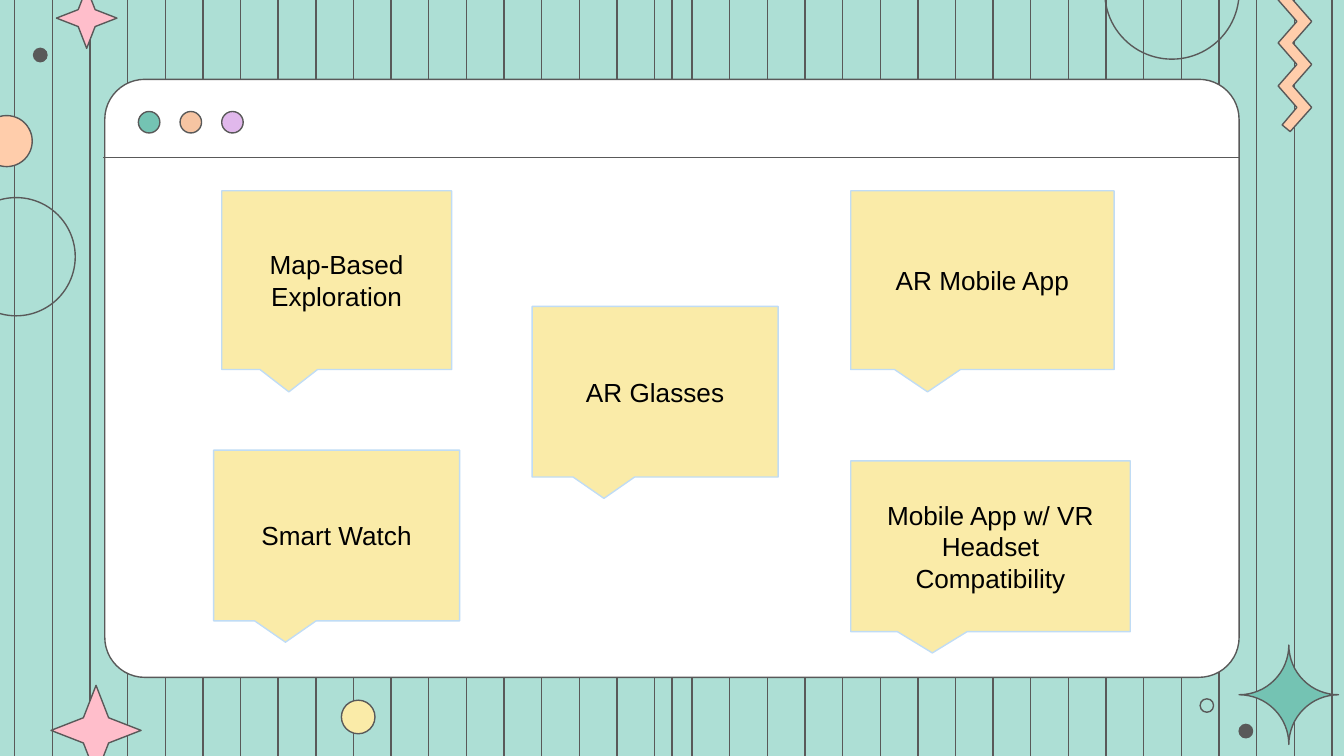
from math import cos, pi, sin

from pptx import Presentation
from pptx import util as u
from pptx.dml.color import RGBColor
from pptx.enum import shapes, text
from pptx.oxml import parse_xml
from pptx.oxml.ns import nsdecls

MINT = RGBColor(0xAD, 0xDF, 0xD5)
TEAL = RGBColor(0x74, 0xC3, 0xB3)
GREY = RGBColor(0x59, 0x59, 0x59)
WHITE = RGBColor(0xFF, 0xFF, 0xFF)
BLACK = RGBColor(0, 0, 0)
ORANGE = RGBColor(0xF6, 0xC4, 0xA2)
PEACH = RGBColor(0xFF, 0xCD, 0xAB)
LILAC = RGBColor(0xE1, 0xB8, 0xEC)
PINK = RGBColor(0xFF, 0xBE, 0xCB)
YELLOW = RGBColor(0xFA, 0xEB, 0xA8)
PALE_BLUE = RGBColor(0xC0, 0xDC, 0xF5)

COLS, ROWS = 100, 56.25
KIND = shapes.MSO_SHAPE


class Board:
    """Draws on one slide; every length is in columns and rows of the grid."""
    font, size, stroke = "Arial", u.Pt(14), u.Pt(0.75)

    def __init__(self, prs):
        self.cell = prs.slide_width / COLS
        self.s = prs.slides.add_slide(prs.slide_layouts[6])

    def emu(self, *cells):
        return [round(c * self.cell) for c in cells]

    def background(self, color):
        fill = self.s.background.fill
        fill.solid()
        fill.fore_color.rgb = color

    def paint(self, sp, fill, line):
        sp.shadow.inherit = False
        if fill is None:
            sp.fill.background()
        else:
            sp.fill.solid()
            sp.fill.fore_color.rgb = fill
        sp.line.color.rgb = line
        sp.line.width = self.stroke
        return sp

    def shape(self, kind, x, y, w, h, fill=None, line=GREY, adj=()):
        sp = self.s.shapes.add_shape(kind, *self.emu(x, y, w, h))
        for i, value in enumerate(adj):
            sp.adjustments[i] = value
        return self.paint(sp, fill, line)

    def circle(self, x, y, d, fill=None):
        return self.shape(KIND.OVAL, x, y, d, d, fill)

    def star(self, x, y, d, fill):
        return self.shape(KIND.STAR_4_POINT, x, y, d, d, fill, adj=[0.198])

    def polygon(self, points, fill):
        first, *rest = [self.emu(x, y) for x, y in points]
        fb = self.s.shapes.build_freeform(*first)
        fb.add_line_segments(rest, close=True)
        return self.paint(fb.convert_to_shape(), fill, GREY)

    def line(self, x1, y1, x2, y2):
        c = self.s.shapes.add_connector(
            shapes.MSO_CONNECTOR.STRAIGHT, *self.emu(x1, y1, x2, y2))
        c.line.color.rgb = GREY
        c.line.width = self.stroke
        c._element.spPr.append(parse_xml(f"<a:effectLst {nsdecls('a')}/>"))

    def callout(self, label, x, y, w, h):
        sp = self.shape(KIND.ROUNDED_RECTANGULAR_CALLOUT, x, y, w, h, YELLOW,
                        PALE_BLUE, [-0.208, 0.625, 0])
        tf = sp.text_frame
        tf.word_wrap = True
        tf.vertical_anchor = text.MSO_ANCHOR.MIDDLE
        tf.margin_left = tf.margin_right = u.Inches(0.1)
        tf.margin_top = tf.margin_bottom = u.Inches(0.1)
        p = tf.paragraphs[0]
        p.alignment = text.PP_ALIGN.CENTER
        r = p.add_run()
        r.text = label
        r.font.name, r.font.size = self.font, self.size
        r.font.color.rgb = BLACK


def sparkle(cx, cy, radius, steps=16):
    """Four-pointed outline made of quarter circles centred on the box corners."""
    points = []
    for quarter in range(4):
        corner = (quarter + 0.5) * pi / 2
        ox = cx + radius * 2 ** 0.5 * cos(corner)
        oy = cy + radius * 2 ** 0.5 * sin(corner)
        for i in range(steps):
            a = (quarter - 1) * pi / 2 - i / steps * pi / 2
            points.append((ox + radius * cos(a), oy + radius * sin(a)))
    return points


def zigzag(left, bottom, swing, step, thickness, turns):
    """Ribbon that climbs from its lowest corner, with slanted ends."""
    edge = [(left + swing * (i % 2 == 0), bottom - step * i) for i in range(turns)]
    far_edge = [(x + thickness, y) for x, y in reversed(edge)]
    top = bottom - step * turns
    return ([(left + 0.3, bottom + 1.3)] + edge
            + [(left + 1.7, top + 0.1 - step / 2), (left + 2.3, top + 0.7 - step / 2)]
            + far_edge + [(left + 0.9, bottom + 1.8)])


def main():
    prs = Presentation()
    prs.slide_width, prs.slide_height = u.Inches(10), u.Inches(5.625)
    b = Board(prs)
    b.background(MINT)

    for x in [1.1 + 2.8 * i for i in range(36)] + [50]:
        b.line(x, 0, x, ROWS)

    b.shape(KIND.ROUNDED_RECTANGLE, 7.8, 5.9, 84.4, 44.5, WHITE, adj=[0.067])
    b.line(92.2, 11.7, 7.7, 11.7)
    for i, color in enumerate([TEAL, ORANGE, LILAC]):
        b.circle(10.3 + 3.1 * i, 8.3, 1.6, color)

    b.circle(82.2, -5.6, 10)
    b.polygon(sparkle(95.9, 51.7, 3.7), TEAL)
    b.circle(92.2, 53.9, 1, GREY)
    b.circle(-3.2, 14.7, 8.8)
    b.circle(-1.4, 8.6, 3.8, PEACH)
    b.circle(89.3, 52, 1)
    b.polygon(zigzag(95.1, 8, 1.4, 1.6, 1.1, 8), PEACH)
    b.star(3.8, 51, 6.7, PINK)
    b.star(4.2, -0.9, 4.5, PINK)
    b.circle(2.5, 3.6, 1, GREY)
    b.circle(25.4, 52.1, 2.5, YELLOW)

    for label, *box in [
        ("Map-Based Exploration", 16.5, 14.2, 17.1, 13.3),
        ("Smart Watch", 15.9, 33.5, 18.3, 12.7),
        ("AR Glasses", 39.6, 22.8, 18.3, 12.7),
        ("Mobile App w/ VR Headset Compatibility", 63.3, 34.3, 20.8, 12.7),
        ("AR Mobile App", 63.3, 14.2, 19.6, 13.3),
    ]:
        b.callout(label, *box)

    prs.save("out.pptx")


if __name__ == "__main__":
    main()
